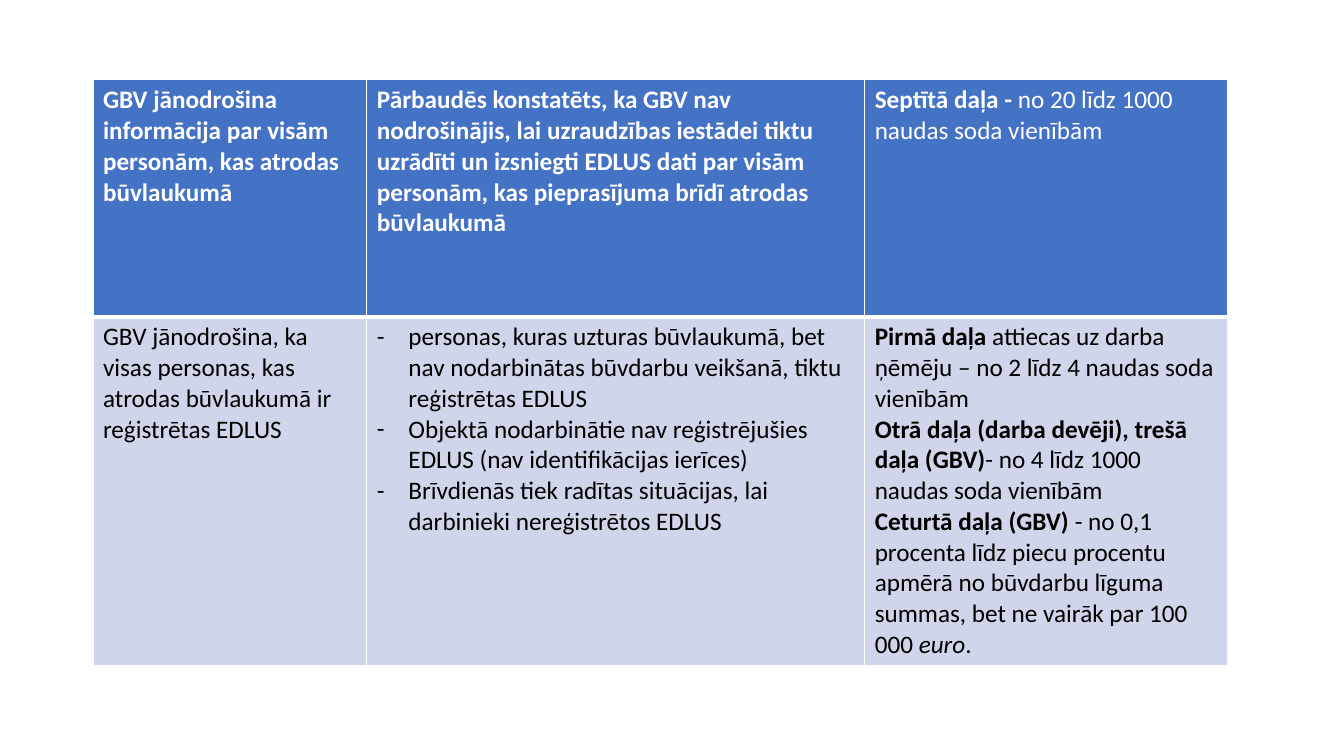
import pptx
import pptx.dml.color
import pptx.oxml
import pptx.oxml.ns
import pptx.util

Pt = pptx.util.Pt
RGBColor = pptx.dml.color.RGBColor

WHITE = RGBColor(0xFF, 0xFF, 0xFF)
BLACK = RGBColor(0x00, 0x00, 0x00)
HEADER_BLUE = RGBColor(0x44, 0x72, 0xC4)
BODY_BLUE = RGBColor(0xCF, 0xD5, 0xEA)

FONT_NAME = "Calibri"
FONT_SIZE = Pt(18)
BULLET_INDENT = Pt(22.5)
COLUMN_WIDTHS = [Pt(195.7), Pt(355.6), Pt(259.2)]
ROW_HEIGHTS = [Pt(169.2), Pt(249)]

# A cell is a list of paragraphs, a paragraph a list of (text, style) runs
HEADER_CELLS = [
    [[("GBV jānodrošina informācija par visām personām, kas atrodas būvlaukumā", "bold")]],
    [[("Pārbaudēs konstatēts, ka GBV nav nodrošinājis, lai uzraudzības iestādei tiktu "
       "uzrādīti un izsniegti EDLUS dati par visām personām, kas pieprasījuma brīdī "
       "atrodas būvlaukumā", "bold")]],
    [[("Septītā daļa - ", "bold"), ("no 20 līdz 1000 naudas soda vienībām", "plain")]],
]
BODY_CELLS = [
    [[("GBV jānodrošina, ka visas personas, kas atrodas būvlaukumā ir reģistrētas EDLUS",
       "plain")]],
    [
        [("personas, kuras uzturas būvlaukumā, bet nav nodarbinātas būvdarbu veikšanā, "
          "tiktu reģistrētas EDLUS", "plain")],
        [("Objektā nodarbinātie nav reģistrējušies EDLUS (nav identifikācijas ierīces)",
          "plain")],
        [("Brīvdienās tiek radītas situācijas, lai darbinieki nereģistrētos EDLUS", "plain")],
    ],
    [
        [("Pirmā daļa ", "bold"),
         ("attiecas uz darba ņēmēju – no 2 līdz 4 naudas soda vienībām", "plain")],
        [("Otrā daļa (darba devēji), trešā daļa (GBV)", "bold"),
         ("- no 4 līdz 1000 naudas soda vienībām", "plain")],
        [("Ceturtā daļa (GBV) ", "bold"),
         ("- no 0,1 procenta līdz piecu procentu apmērā no būvdarbu līguma summas, "
          "bet ne vairāk par 100 000 ", "plain"),
         ("euro", "italic"), (".", "plain")],
    ],
]


def set_borders(cell, bottom_width):
    """Draw white lines on all four sides of a cell."""
    properties = cell._tc.get_or_add_tcPr()
    sides = {"lnL": Pt(1), "lnR": Pt(1), "lnT": Pt(1), "lnB": bottom_width}
    for side, width in sides.items():
        properties.append(pptx.oxml.parse_xml(
            f'<a:{side} {pptx.oxml.ns.nsdecls("a")} w="{width}"><a:solidFill>'
            f'<a:srgbClr val="{WHITE}"/></a:solidFill></a:{side}>'))


def add_dash_bullet(paragraph):
    """Give a paragraph a hanging dash."""
    properties = paragraph._p.get_or_add_pPr()
    properties.set("marL", str(BULLET_INDENT))
    properties.set("indent", str(-BULLET_INDENT))
    for tag in (f'buFont {pptx.oxml.ns.nsdecls("a")} typeface="{FONT_NAME}"',
                f'buChar {pptx.oxml.ns.nsdecls("a")} char="-"'):
        properties.append(pptx.oxml.parse_xml(f"<a:{tag}/>"))


def write_cell(cell, paragraphs, color):
    """Write styled runs; several unlabelled paragraphs become a dash list."""
    is_list = len(paragraphs) > 1 and all(len(runs) == 1 for runs in paragraphs)
    text_frame = cell.text_frame
    text_frame.text = "\n".join("".join(text for text, _ in runs) for runs in paragraphs)
    for paragraph, runs in zip(text_frame.paragraphs, paragraphs):
        paragraph.clear()
        if is_list:
            add_dash_bullet(paragraph)
        for text, style in runs:
            run = paragraph.add_run()
            run.text = text
            run.font.name = FONT_NAME
            run.font.size = FONT_SIZE
            run.font.bold = style == "bold"
            run.font.italic = style == "italic"
            run.font.color.rgb = color


def fill_row(table, row_index, contents, fill_color, text_color, bottom_width):
    """Format and write one table row."""
    for cell, paragraphs in zip(table.rows[row_index].cells, contents):
        set_borders(cell, bottom_width)
        cell.fill.solid()
        cell.fill.fore_color.rgb = fill_color
        write_cell(cell, paragraphs, text_color)


def add_penalty_table(slide):
    """Add the table of duties, findings and penalties."""
    table = slide.shapes.add_table(
        len(ROW_HEIGHTS), len(COLUMN_WIDTHS), Pt(66.4), Pt(57),
        sum(COLUMN_WIDTHS), sum(ROW_HEIGHTS)).table
    for column, width in zip(table.columns, COLUMN_WIDTHS):
        column.width = width
    for row, height in zip(table.rows, ROW_HEIGHTS):
        row.height = height
    fill_row(table, 0, HEADER_CELLS, HEADER_BLUE, WHITE, Pt(3))
    fill_row(table, 1, BODY_CELLS, BODY_BLUE, BLACK, Pt(1))


def main():
    presentation = pptx.Presentation()
    presentation.slide_width = Pt(960)
    presentation.slide_height = Pt(540)
    slide = presentation.slides.add_slide(presentation.slide_layouts[6])
    add_penalty_table(slide)
    presentation.save("out.pptx")


if __name__ == "__main__":
    main()
